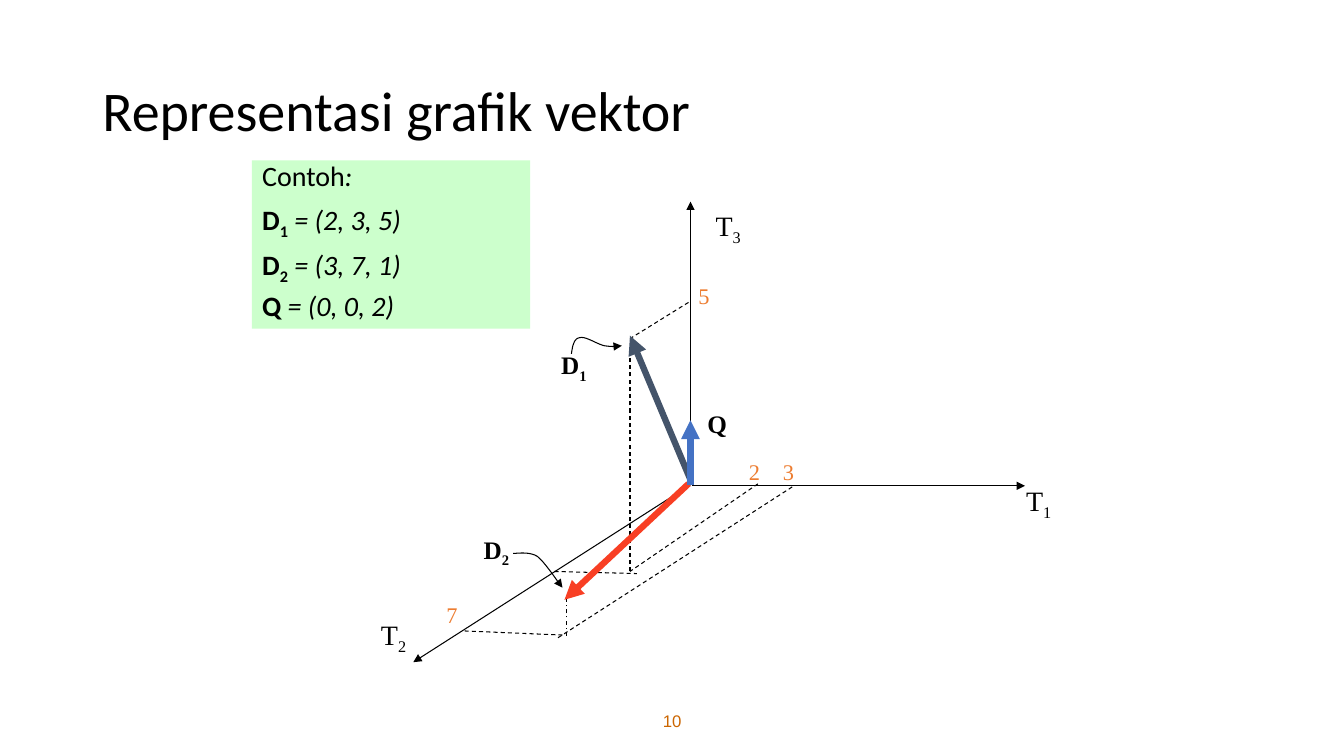
from lxml.etree import SubElement
from pptx import Presentation
from pptx.dml.color import RGBColor
from pptx.enum.dml import MSO_LINE
from pptx.enum.shapes import MSO_CONNECTOR
from pptx.enum.text import MSO_ANCHOR, MSO_AUTO_SIZE, PP_ALIGN
from pptx.oxml.ns import qn
from pptx.util import Pt

BLACK = "000000"
ORANGE = "ED7D31"
SERIF = "Times New Roman"


def rgb(code):
    """Turn a hex string into a colour."""
    return RGBColor.from_string(code)


def write(paragraph, text, size=20, font="Calibri", color=BLACK,
          bold=False, italic=False, subscript=False):
    """Append one formatted run to a paragraph."""
    run = paragraph.add_run()
    run.text = text
    run.font.size = Pt(size)
    run.font.name = font
    run.font.color.rgb = rgb(color)
    run.font.bold = bold
    run.font.italic = italic
    if subscript:
        run._r.get_or_add_rPr().set("baseline", "-25000")


def place(shape, left, top, width, height):
    """Move and size a shape."""
    shape.left, shape.top = Pt(left), Pt(top)
    shape.width, shape.height = Pt(width), Pt(height)


def add_title(slide, text):
    """Fill the title placeholder."""
    title = slide.shapes.title
    place(title, 66, 28.8, 828, 104.4)
    title.text_frame.auto_size = MSO_AUTO_SIZE.NONE
    title.text_frame.vertical_anchor = MSO_ANCHOR.MIDDLE
    heading = title.text_frame.paragraphs[0]
    heading.alignment = PP_ALIGN.LEFT
    heading.line_spacing = 0.9
    write(heading, text, size=40)


def add_example(slide, vectors):
    """Fill the body placeholder with the vectors and their coordinates."""
    example = slide.placeholders[1]
    place(example, 180, 114.5, 198.7, 120.2)
    example.fill.solid()
    example.fill.fore_color.rgb = rgb("CCFFCC")
    frame = example.text_frame
    frame.auto_size = MSO_AUTO_SIZE.NONE
    frame.vertical_anchor = MSO_ANCHOR.TOP
    intro = frame.paragraphs[0]
    write(intro, "Contoh")
    write(intro, ":", italic=True)
    for name, index, coordinates in vectors:
        row = frame.add_paragraph()
        write(row, name, bold=True)
        if index:
            write(row, index, bold=True, subscript=True)
        write(row, f" = {coordinates}", italic=True)
    for position, row in enumerate(frame.paragraphs):
        properties = row._p.get_or_add_pPr()
        properties.set("marL", str(Pt(18)))
        properties.set("indent", str(-Pt(18)))
        SubElement(properties, qn("a:buNone"))
        row.line_spacing = 0.8
        row.space_before = Pt(10 if position else 0)


def add_label(shapes, box, name, index="", align=PP_ALIGN.LEFT, wrap=False, **style):
    """Add a text box holding a name and an optional subscript index."""
    label = shapes.add_textbox(*map(Pt, box))
    frame = label.text_frame
    frame.word_wrap = wrap
    frame.vertical_anchor = MSO_ANCHOR.MIDDLE if wrap else MSO_ANCHOR.TOP
    caption = frame.paragraphs[0]
    caption.alignment = align
    write(caption, name, **style)
    if index:
        write(caption, index, subscript=True, **style)


def style_stroke(shape, color, width, dash=None, arrow=False):
    """Set colour, width, dash and arrowhead of an outline."""
    shape.line.color.rgb = rgb(color)
    shape.line.width = Pt(width)
    if dash:
        shape.line.dash_style = dash
    if arrow:
        SubElement(shape.line._get_or_add_ln(), qn("a:tailEnd"), type="triangle")


def add_line(shapes, ends, color=BLACK, width=0.75, **stroke):
    """Add a straight line between two points."""
    line = shapes.add_connector(MSO_CONNECTOR.STRAIGHT, *map(Pt, ends))
    style_stroke(line, color, width, **stroke)
    SubElement(line._element.spPr, qn("a:effectLst"))


def bezier(start, curves, steps=10):
    """List the points along a chain of cubic curves."""
    points = []
    for x1, y1, x2, y2, x3, y3 in curves:
        corners = (start, (x1, y1), (x2, y2), (x3, y3))
        for step in range(1, steps + 1):
            t = step / steps
            weights = ((1 - t) ** 3, 3 * t * (1 - t) ** 2, 3 * t * t * (1 - t), t ** 3)
            points.append(tuple(
                Pt(sum(w * corner[axis] for w, corner in zip(weights, corners)))
                for axis in (0, 1)))
        start = (x3, y3)
    return points


def add_pointer(shapes, start, curves):
    """Add a curved arrow from a label to its vector."""
    builder = shapes.build_freeform(Pt(start[0]), Pt(start[1]))
    builder.add_line_segments(bezier(start, curves), close=False)
    pointer = builder.convert_to_shape()
    pointer.fill.background()
    pointer.shadow.inherit = False
    style_stroke(pointer, BLACK, 0.75, arrow=True)


def add_diagram(slide):
    """Draw the axes, guides, vectors and labels as one group."""
    shapes = slide.shapes.add_group_shape().shapes
    axes = [
        (494.6, 347, 732.2, 347),
        (493.2, 346.3, 295.2, 473),
        (493.2, 346.3, 493.2, 144),
    ]
    guides = [
        (541.4, 345.6, 450, 408.2),
        (396, 408.2, 455, 409.7),
        (450, 408.2, 450, 252),
        (565.9, 347.8, 398.2, 455.8),
        (401.8, 453.6, 331.9, 450.7),
        (491.8, 216, 450, 241.9),
    ]
    vectors = [
        ("44546A", (493.2, 342.7, 450, 239.8)),
        ("F83F24", (491.8, 345.6, 403.2, 428.4)),
        ("4472C4", (493.2, 346.3, 493.2, 300.2)),
    ]
    for ends in axes:
        add_line(shapes, ends, arrow=True)
    for ends in guides:
        add_line(shapes, ends, dash=MSO_LINE.DASH)
    add_line(shapes, (404.6, 454.3, 404.6, 426.2), dash=MSO_LINE.DASH_DOT)
    for color, ends in vectors:
        add_line(shapes, ends, color=color, width=4.5, arrow=True)

    for index, left, top in [("1", 725.8, 342), ("2", 265, 437.8), ("3", 504, 145.4)]:
        add_label(shapes, (left, top, 34, 31.7), "T", index, font=SERIF)
    for name, index, left, top, width in [
        ("D", "1", 393.8, 246.2, 34),
        ("D", "2", 338.4, 378, 36.7),
        ("Q", "", 498.2, 288, 28.8),
    ]:
        add_label(shapes, (left, top, width, 28.8), name, index,
                  size=18, font=SERIF, bold=True)
    for value, left, top in [
        ("7", 311.8, 426.2), ("3", 552.2, 324), ("2", 527.8, 324), ("5", 491.8, 198),
    ]:
        add_label(shapes, (left, top, 22.3, 26.6), value,
                  size=16, font=SERIF, color=ORANGE)

    add_pointer(shapes, (408.2, 252.7), [
        (409, 247.7, 409.7, 241.9, 414, 241.2),
        (418.3, 239.8, 427, 246.2, 432, 247),
        (437, 247.7, 440.6, 247.7, 444.2, 247),
    ])
    add_pointer(shapes, (366.5, 395.3), [
        (369.4, 395.3, 378, 393.8, 383.8, 397.4),
        (389.5, 401.8, 398.2, 415.4, 401.8, 419.8),
    ])


def main():
    """Build and save the slide."""
    deck = Presentation()
    deck.slide_width, deck.slide_height = Pt(960), Pt(540)
    slide = deck.slides.add_slide(deck.slide_layouts[1])
    add_title(slide, "Representasi grafik vektor")
    add_example(slide, [
        ("D", "1", "(2, 3, 5)"),
        ("D", "2", "(3, 7, 1)"),
        ("Q", "", "(0, 0, 2)"),
    ])
    add_diagram(slide)
    add_label(slide.shapes, (318.2, 500.4, 324, 28.8), "10", align=PP_ALIGN.CENTER,
              wrap=True, size=12, font="Arial", color="CC6600")
    deck.save("out.pptx")


if __name__ == "__main__":
    main()
